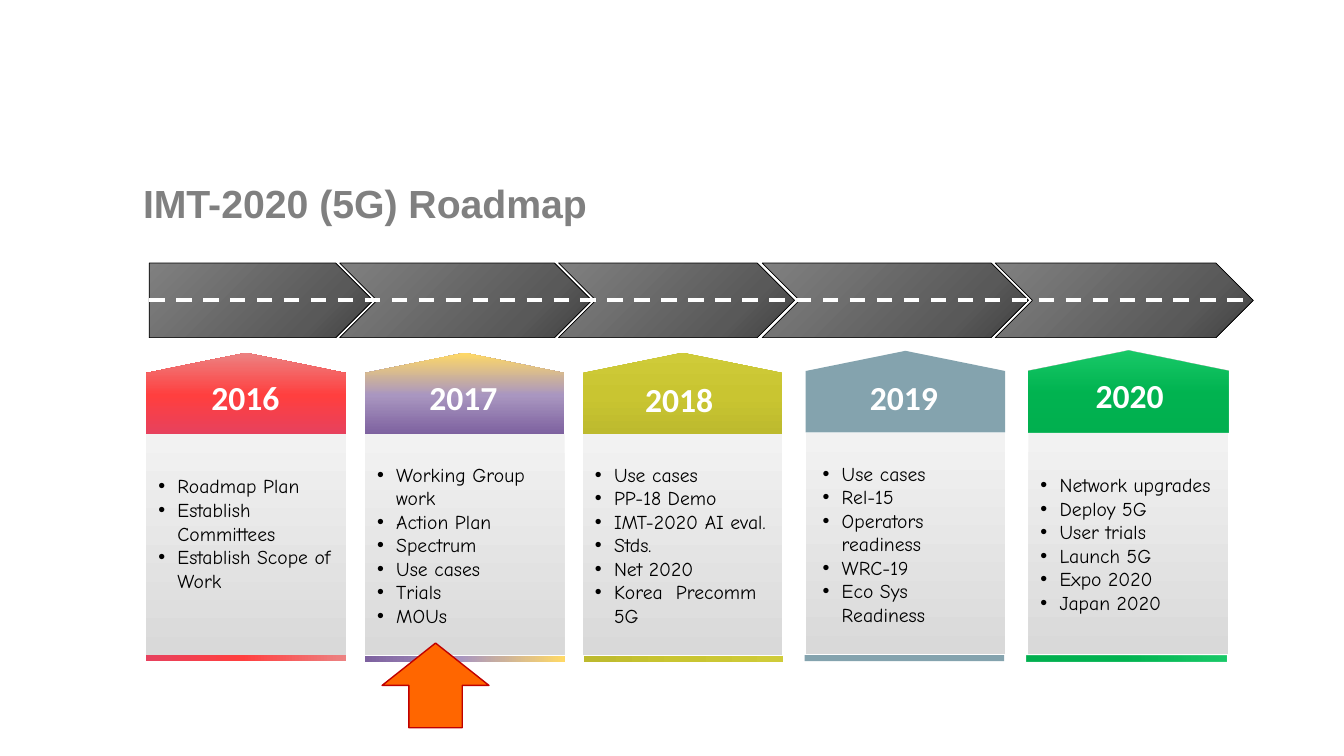
from lxml import etree
from pptx import Presentation
from pptx import util as u
from pptx.dml.color import RGBColor
from pptx.enum import dml, shapes, text
from pptx.oxml.ns import qn

COLORS = {"title": "808080", "black": "000000", "white": "FFFFFF",
          "arrow": "FF6600", "arrow_line": "C00000"}
ROAD = [(0, "808080"), (74, "595959"), (100, "404040")]
PANEL = [(0, "F2F2F2"), (100, "D9D9D9")]
TITLE = "IMT-2020 (5G) Roadmap"
ROAD_PIECES = [(1.48, 2.22), (3.37, 2.5), (5.54, 2.34), (7.56, 2.64), (9.87, 2.56)]
COLUMNS = [
    {"year": "2016", "left": 1.45, "head_top": 3.5, "year_at": (1.63, 3.69),
     "panel_top": 4.31, "bar_at": (1.45, 6.5), "insets": (0.05, 0.28),
     "fill": [(0, "E7415D"), (48, "FF3F3F"), (100, "EC8282")],
     "items": ["Roadmap Plan", "Establish Committees", "Establish Scope of Work"]},
    {"year": "2017", "left": 3.62, "head_top": 3.5, "year_at": (3.79, 3.69),
     "panel_top": 4.31, "bar_at": (3.62, 6.51), "insets": (0.05, 0.05),
     "fill": [(0, "7D619F"), (48, "A996C0"), (100, "FFD966")],
     "items": ["Working Group work", "Action Plan", "Spectrum", "Use cases",
               "Trials", "MOUs"]},
    {"year": "2018", "left": 5.78, "head_top": 3.5, "year_at": (5.93, 3.71),
     "panel_top": 4.31, "bar_at": (5.79, 6.51), "insets": (0.05, 0.05),
     "fill": [(0, "BDBA2E"), (48, "C9C531"), (100, "CFCB39")],
     "items": ["Use cases", "PP-18 Demo", "IMT-2020 AI eval.", "Stds.",
               "Net 2020", "Korea  Precomm 5G"]},
    {"year": "2019", "left": 7.99, "head_top": 3.48, "year_at": (8.16, 3.69),
     "panel_top": 4.3, "bar_at": (7.98, 6.5), "insets": (0.1, 0.05),
     "fill": [(0, "84A3AE")],
     "items": ["Use cases", "Rel-15", "Operators readiness", "WRC-19",
               "Eco Sys Readiness"]},
    {"year": "2020", "left": 10.2, "head_top": 3.48, "year_at": (10.4, 3.67),
     "panel_top": 4.3, "bar_at": (10.18, 6.5), "insets": (0.05, 0.05),
     "fill": [(0, "00B050"), (48, "00B451"), (100, "00C459", 90)],
     "items": ["Network upgrades", "Deploy 5G", "User trials", "Launch 5G",
               "Expo 2020", "Japan 2020"]},
]
COLUMN_W, HEAD_H, PANEL_H, BAR_H = 1.98, 0.81, 2.19, 0.06
ROAD_TOP, ROAD_H = 2.61, 0.74


def rgb(value):
    return RGBColor.from_string(value)


def paint(sp, stops, angle=0):
    if len(stops) == 1:
        sp.fill.solid()
        sp.fill.fore_color.rgb = rgb(stops[0][1])
        return
    sp.fill.gradient()
    grad = sp._element.spPr.find(qn("a:gradFill"))
    for child in list(grad):
        grad.remove(child)
    grad.set("rotWithShape", "1")
    stop_list = etree.SubElement(grad, qn("a:gsLst"))
    for position, color, *alpha in stops:
        stop = etree.SubElement(stop_list, qn("a:gs"), pos=str(position * 1000))
        clr = etree.SubElement(stop, qn("a:srgbClr"), val=color)
        if alpha:
            etree.SubElement(clr, qn("a:alpha"), val=str(alpha[0] * 1000))
    etree.SubElement(grad, qn("a:lin"), ang=str(angle * 60000), scaled="0")


def add_shape(slide, kind, box, stops, angle=0, line=None, width=0.5):
    sp = slide.shapes.add_shape(kind, *map(u.Inches, box))
    sp.shadow.inherit = False
    paint(sp, stops, angle)
    if line:
        sp.line.color.rgb = rgb(line)
        sp.line.width = u.Pt(width)
    else:
        sp.line.fill.background()
    return sp


def style(p, font, size, color, bold=False):
    for r in p.runs:
        r.font.name = font
        r.font.size = u.Pt(size)
        r.font.bold = bold
        r.font.color.rgb = rgb(color)


def add_label(slide, box, words, font, size, color, align):
    tf = slide.shapes.add_textbox(*map(u.Inches, box)).text_frame
    tf.word_wrap = True
    tf.text = words
    p = tf.paragraphs[0]
    p.alignment = align
    style(p, font, size, color, True)
    return tf


def add_bullets(sp, items, insets):
    tf = sp.text_frame
    tf.word_wrap = True
    tf.vertical_anchor = text.MSO_ANCHOR.MIDDLE
    tf.margin_left, tf.margin_bottom = map(u.Inches, insets)
    tf.margin_top, tf.margin_right = u.Inches(0.05), u.Inches(0.1)
    tf.text = "\n".join(items)
    for p in tf.paragraphs:
        p.alignment = text.PP_ALIGN.LEFT
        pPr = p._p.get_or_add_pPr()
        pPr.set("marL", str(u.Inches(0.26)))
        pPr.set("indent", str(u.Inches(-0.19)))
        etree.SubElement(pPr, qn("a:buFont"), typeface="Arial")
        etree.SubElement(pPr, qn("a:buChar"), char="•")
        style(p, "Comic Neue", 14, COLORS["black"])


def add_road(slide):
    for i, (left, width) in enumerate(ROAD_PIECES):
        kind = shapes.MSO_SHAPE.CHEVRON if i else shapes.MSO_SHAPE.PENTAGON
        add_shape(slide, kind, (left, ROAD_TOP, width, ROAD_H), ROAD, 45, COLORS["black"])
    middle = u.Inches(ROAD_TOP + ROAD_H / 2)
    start, end = ROAD_PIECES[0][0], sum(ROAD_PIECES[-1])
    lane = slide.shapes.add_connector(shapes.MSO_CONNECTOR.STRAIGHT, u.Inches(start),
                                      middle, u.Inches(end), middle)
    lane.line.color.rgb = rgb(COLORS["white"])
    lane.line.width = u.Pt(2.75)
    lane.line.dash_style = dml.MSO_LINE.DASH
    etree.SubElement(lane._element.spPr, qn("a:effectLst"))


def add_column(slide, col):
    shift = (COLUMN_W - HEAD_H) / 2
    head = add_shape(slide, shapes.MSO_SHAPE.PENTAGON,
                     (col["left"] + shift, col["head_top"] - shift, HEAD_H, COLUMN_W),
                     col["fill"])
    head.rotation = 270
    head.adjustments[0] = 0.247
    panel = add_shape(slide, shapes.MSO_SHAPE.RECTANGLE,
                      (col["left"], col["panel_top"], COLUMN_W, PANEL_H), PANEL, 90)
    add_bullets(panel, col["items"], col["insets"])
    add_label(slide, (*col["year_at"], 1.61, 0.6), col["year"], "Calibri", 24,
              COLORS["white"], text.PP_ALIGN.CENTER)
    add_shape(slide, shapes.MSO_SHAPE.RECTANGLE, (*col["bar_at"], COLUMN_W, BAR_H),
              col["fill"])


def main():
    prs = Presentation()
    prs.slide_width, prs.slide_height = u.Inches(13.33), u.Inches(7.5)
    slide = prs.slides.add_slide(prs.slide_layouts[6])
    title = add_label(slide, (1.32, 1.78, 8.55, 0.53), TITLE, "Arial", 28,
                      COLORS["title"], text.PP_ALIGN.LEFT)
    title.vertical_anchor = text.MSO_ANCHOR.MIDDLE
    title.paragraphs[0].line_spacing = 0.9
    add_road(slide)
    for col in COLUMNS:
        add_column(slide, col)
    add_shape(slide, shapes.MSO_SHAPE.UP_ARROW, (3.79, 6.38, 1.06, 0.84),
              [(0, COLORS["arrow"])], line=COLORS["arrow_line"], width=1)
    prs.save("out.pptx")


if __name__ == "__main__":
    main()
